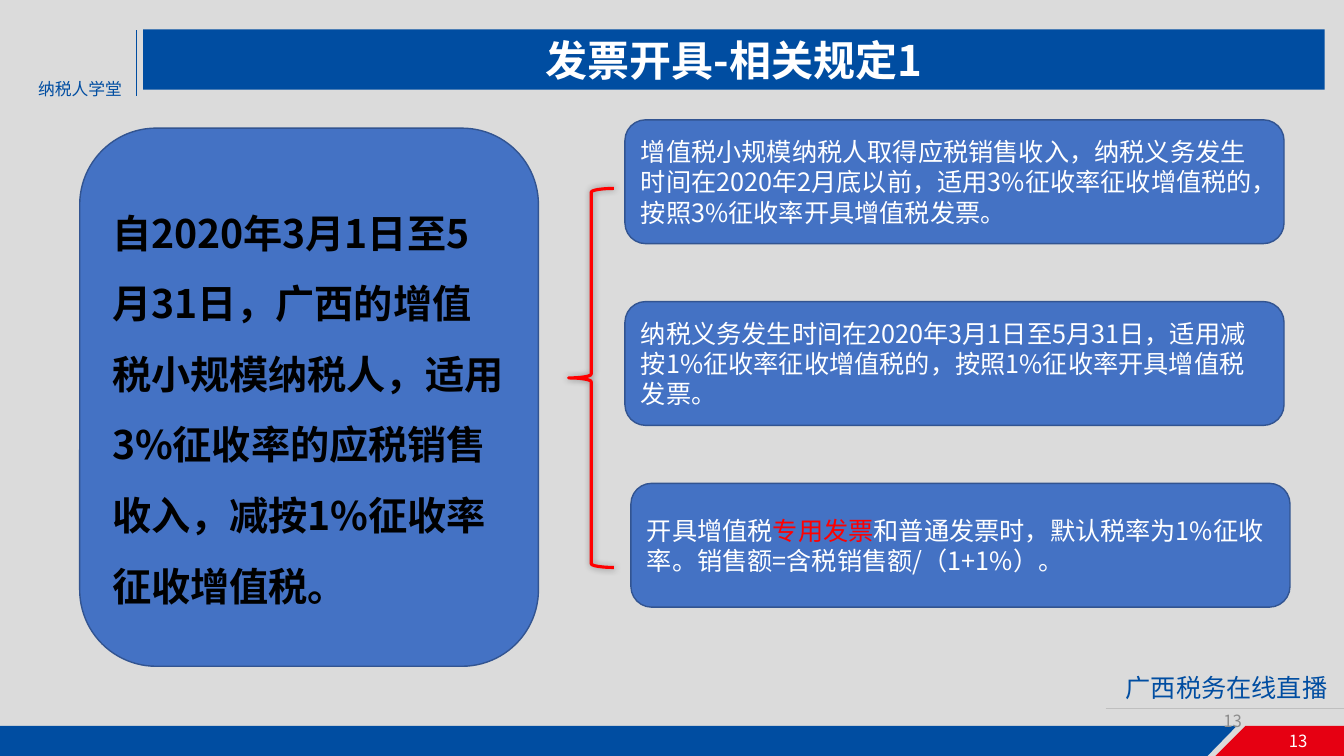
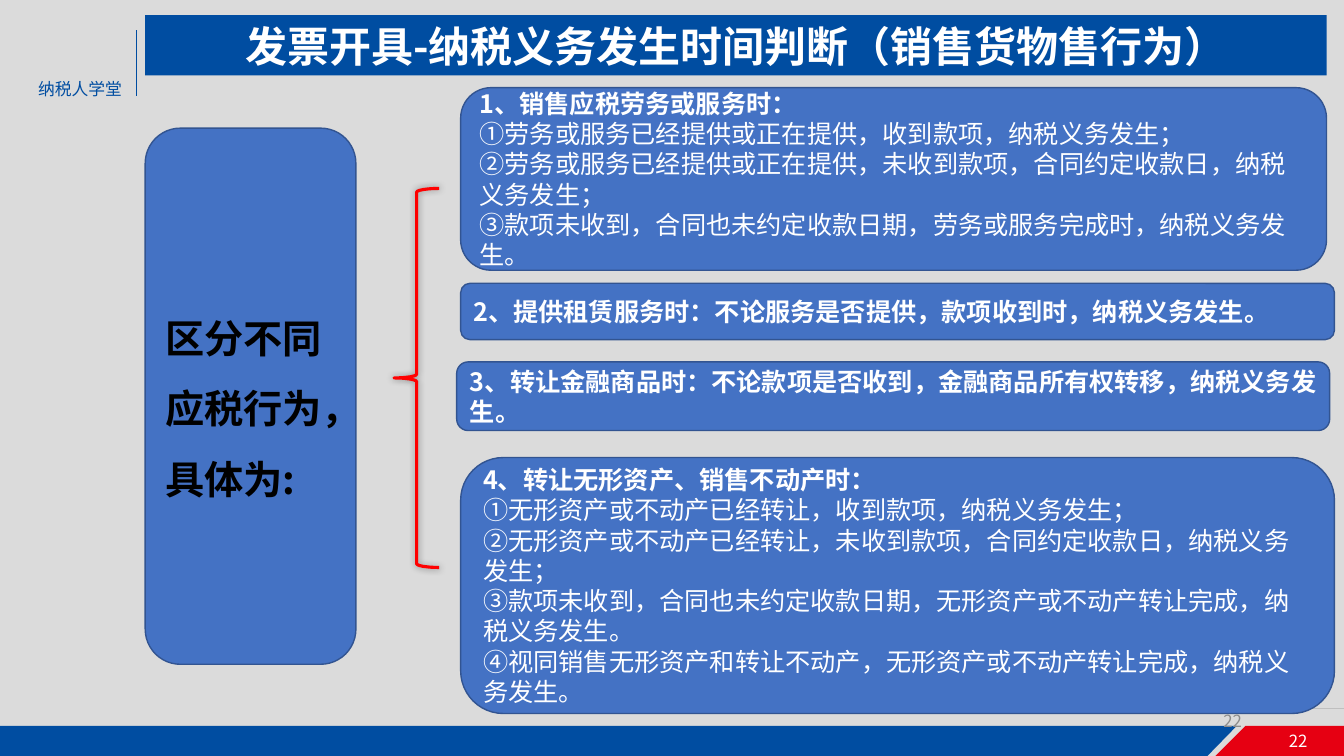
from lxml import etree
from pptx import Presentation
from pptx import util as u
from pptx.dml.color import RGBColor
from pptx.enum import shapes, text
from pptx.oxml.ns import qn

FONT = "Noto Sans CJK SC"
NAVY, RED, WHITE, BLACK = "004DA1", "E60012", "FFFFFF", "000000"
CARD_FILL, CARD_LINE, ACCENT = "4472C4", "325491", "FF0000"
BACKGROUND, RULE, GREY = "DBDBDB", "BFBFBF", "8C8C8C"
HIGHLIGHT = "专用发票"
Shape = shapes.MSO_SHAPE
Align = text.PP_ALIGN

# Positions and sizes in cm; each card is (box, bold heading, plain lines)
pages = [
    {
        "number": "13",
        "title": "发票开具-相关规定1",
        "title_at": (3.61, 0.74),
        "panel": (2.01, 3.23, 11.56, 13.56),
        "panel_text": "自2020年3月1日至5月31日，广西的增值税小规模纳税人，适用3%征收率的应税销售收入，"
                      "减按1%征收率征收增值税。",
        "brace_left": 14.33,
        "cards": [
            ((15.75, 3.02, 16.61, 3.12), [],
             ["增值税小规模纳税人取得应税销售收入，纳税义务发生时间在2020年2月底以前，"
              "适用3%征收率征收增值税的，按照3%征收率开具增值税发票。"]),
            ((15.75, 7.6, 16.61, 3.12), [],
             ["纳税义务发生时间在2020年3月1日至5月31日，适用减按1%征收率征收增值税的，"
              "按照1%征收率开具增值税发票。"]),
            ((15.9, 12.18, 16.61, 3.12), [],
             ["开具增值税专用发票和普通发票时，默认税率为1%征收率。销售额=含税销售额/（1+1%）。"]),
        ],
    },
    {
        "number": "22",
        "title": "发票开具-纳税义务发生时间判断（销售货物售行为）",
        "title_at": (3.66, 0.38),
        "panel": (3.66, 3.23, 5.31, 13.51),
        "panel_text": "区分不同应税行为，具体为:",
        "brace_left": 9.93,
        "cards": [
            ((11.61, 2.21, 21.82, 4.6), ["1、销售应税劳务或服务时："],
             ["①劳务或服务已经提供或正在提供，收到款项，纳税义务发生；",
              "②劳务或服务已经提供或正在提供，未收到款项，合同约定收款日，纳税义务发生；",
              "③款项未收到，合同也未约定收款日期，劳务或服务完成时，纳税义务发生。"]),
            ((11.61, 7.14, 22.02, 1.42),
             ["2、提供租赁服务时：不论服务是否提供，款项收到时，纳税义务发生。"], []),
            ((11.51, 9.12, 22, 1.73),
             ["3、转让金融商品时：不论款项是否收到，金融商品所有权转移，纳税义务发生。"], []),
            ((11.61, 11.53, 22.02, 6.45), ["4、转让无形资产、销售不动产时："],
             ["①无形资产或不动产已经转让，收到款项，纳税义务发生；",
              "②无形资产或不动产已经转让，未收到款项，合同约定收款日，纳税义务发生；",
              "③款项未收到，合同也未约定收款日期，无形资产或不动产转让完成，纳税义务发生。",
              "④视同销售无形资产和转让不动产，无形资产或不动产转让完成，纳税义务发生。"]),
        ],
    },
]


def color(value):
    return RGBColor.from_string(value)


def write(shape, headings, lines, size, ink, align=Align.LEFT, spacing=1.0,
          anchor=text.MSO_ANCHOR.MIDDLE):
    frame = shape.text_frame
    frame.word_wrap = True
    frame.auto_size = text.MSO_AUTO_SIZE.NONE
    frame.vertical_anchor = anchor
    for index, line in enumerate(headings + lines):
        paragraph = frame.add_paragraph() if index else frame.paragraphs[0]
        paragraph.alignment = align
        paragraph.line_spacing = spacing
        font = paragraph.font
        font.name, font.size = FONT, u.Pt(size)
        font.bold = index < len(headings)
        font.color.rgb = color(ink)
        for part in filter(None, line.partition(HIGHLIGHT)):
            run = paragraph.add_run()
            run.text = part
            if part == HIGHLIGHT:
                run.font.color.rgb = color(ACCENT)
    for properties in shape.element.iter(qn("a:defRPr")):
        etree.SubElement(properties, qn("a:ea"), typeface=FONT)


presentation = Presentation()
presentation.slide_width, presentation.slide_height = u.Cm(33.87), u.Cm(19.05)
presentation.slide_master.background.fill.solid()
presentation.slide_master.background.fill.fore_color.rgb = color(BACKGROUND)
layout = presentation.slide_layouts[5]
slides = [presentation.slides.add_slide(layout) for page in pages]

# Shared decoration: drawn once, then moved to the layout
canvas = slides[0].shapes
decoration = []
bands = [
    (NAVY, [(0, 18.29), (31.17, 18.29), (30.38, 19.1), (0, 19.1)]),
    (RED, [(31.39, 18.29), (33.87, 18.29), (33.87, 19.1), (30.58, 19.1)]),
]
for fill, points in bands:
    corners = [(u.Cm(x), u.Cm(y)) for x, y in points]
    builder = canvas.build_freeform(*corners[0])
    builder.add_line_segments(corners[1:], close=True)
    band = builder.convert_to_shape()
    band.shadow.inherit = False
    band.fill.solid()
    band.fill.fore_color.rgb = color(fill)
    band.line.fill.background()
    decoration.append(band)

rules = [(NAVY, (3.43, 0.76, 3.43, 2.41)), (RULE, (27.86, 17.86, 33.87, 17.86))]
for ink, ends in rules:
    rule = canvas.add_connector(shapes.MSO_CONNECTOR.STRAIGHT, *map(u.Cm, ends))
    rule.line.color.rgb = color(ink)
    rule.line.width = u.Pt(0.5)
    etree.SubElement(rule.element.spPr, qn("a:effectLst"))
    decoration.append(rule)

labels = [("纳税人学堂", 12, (0.71, 1.85, 2.74, 0.76)),
          ("广西税务在线直播", 18, (28.12, 16.81, 5.75, 1.02))]
for words, size, box in labels:
    label = canvas.add_textbox(*map(u.Cm, box))
    write(label, [], [words], size, NAVY, anchor=text.MSO_ANCHOR.TOP)
    decoration.append(label)

for number, shape in enumerate(decoration, start=20):
    shape.element.xpath(".//p:cNvPr")[0].set("id", str(number))
    layout.shapes.element.append(shape.element)

for slide, page in zip(slides, pages):
    # Title bar
    title = slide.shapes.title
    title.left, title.top = map(u.Cm, page["title_at"])
    title.width, title.height = u.Cm(29.77), u.Cm(1.52)
    title.fill.solid()
    title.fill.fore_color.rgb = color(NAVY)
    write(title, [page["title"]], [], 30, WHITE, Align.CENTER)

    # Left panel and cards
    panel = slide.shapes.add_shape(Shape.ROUNDED_RECTANGLE, *map(u.Cm, page["panel"]))
    write(panel, [page["panel_text"]], [], 28, BLACK, spacing=1.5)
    boxes = [panel]
    for box, headings, lines in page["cards"]:
        card = slide.shapes.add_shape(Shape.FLOWCHART_ALTERNATE_PROCESS, *map(u.Cm, box))
        write(card, headings, lines, 18, WHITE)
        boxes.append(card)
    for shape in boxes:
        shape.shadow.inherit = False
        shape.fill.solid()
        shape.fill.fore_color.rgb = color(CARD_FILL)
        shape.line.color.rgb = color(CARD_LINE)
        shape.line.width = u.Pt(1)

    # Brace with a soft shadow
    brace = slide.shapes.add_shape(Shape.LEFT_BRACE, u.Cm(page["brace_left"]), u.Cm(4.75),
                                   u.Cm(1.14), u.Cm(9.55))
    brace.fill.background()
    brace.line.color.rgb = color(ACCENT)
    brace.line.width = u.Pt(2.25)
    brace.shadow.inherit = False
    effects = brace.element.spPr.find(qn("a:effectLst"))
    shadow = etree.SubElement(effects, qn("a:outerShdw"), blurRad=str(u.Pt(5)), dist="0", dir="0")
    shade = etree.SubElement(shadow, qn("a:srgbClr"), val=BLACK)
    etree.SubElement(shade, qn("a:alpha"), val="40000")

    # Page numbers
    corner_number = slide.shapes.add_textbox(*map(u.Cm, (32.23, 18.29, 1.37, 1.02)))
    write(corner_number, [], [page["number"]], 12, WHITE, anchor=text.MSO_ANCHOR.TOP)
    grey_number = slide.shapes.add_textbox(*map(u.Cm, (23.93, 17.65, 7.62, 1.02)))
    write(grey_number, [], [page["number"]], 12, GREY, Align.RIGHT)

presentation.save("out.pptx")
